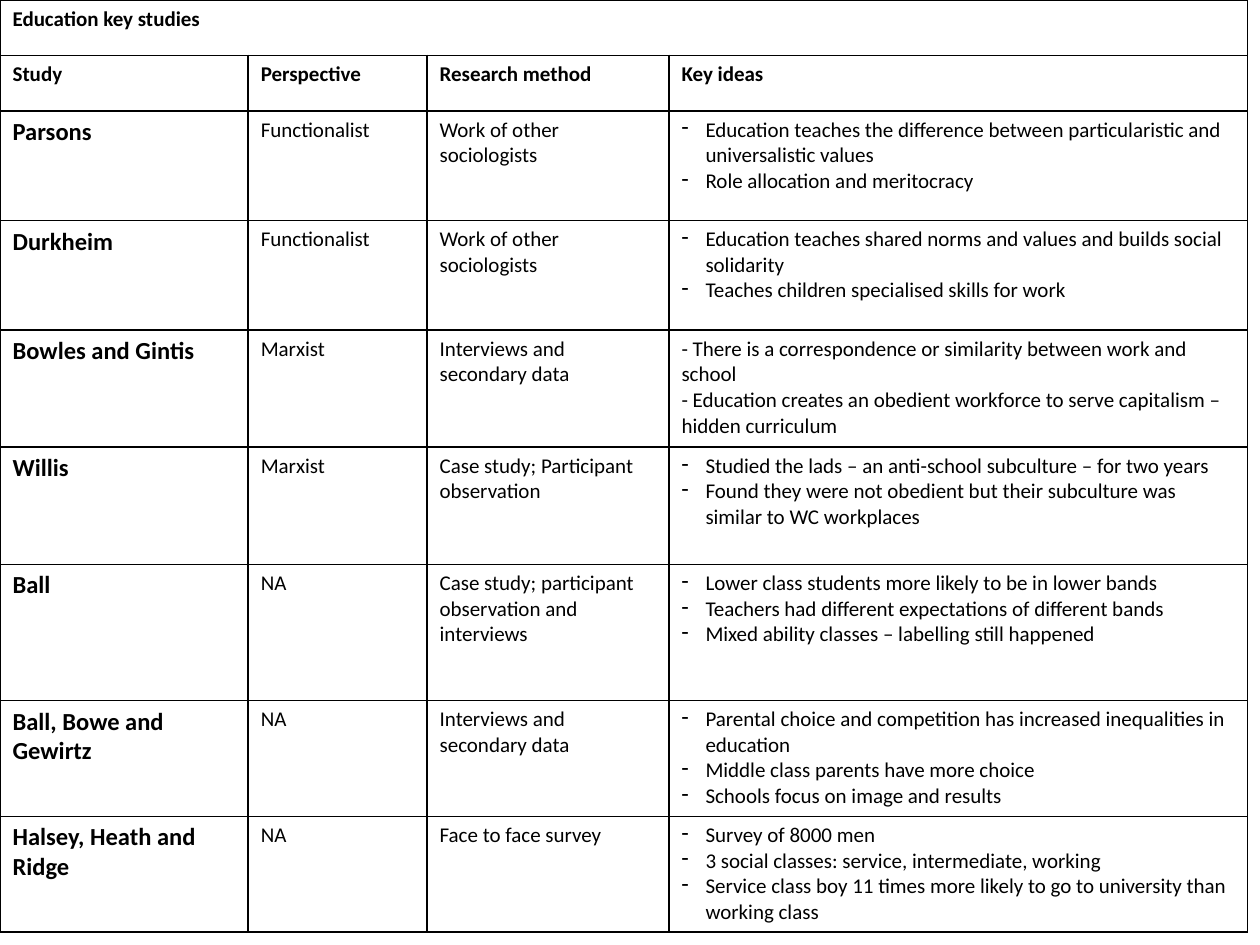
from lxml import etree
from pptx import Presentation
from pptx.dml.color import RGBColor
from pptx.oxml.ns import qn
from pptx.util import Inches, Pt

BLANK_LAYOUT = 6
COLORS = {"text": "000000", "border": "000000", "cell": "FFFFFF"}
HEADING = {"name": "Calibri", "size": Pt(12), "bold": True}
STUDY = {"name": "Calibri", "size": Pt(14), "bold": True}
BODY = {"name": "Calibri", "size": Pt(12), "bold": False}

COLUMN_WIDTHS = [1.97, 1.42, 1.92, 4.59]
ROW_HEIGHTS = [0.44, 0.44, 0.87, 0.87, 0.93, 0.93, 1.08, 0.92, 0.92]
BULLET_INDENT = 0.19

TITLE = "Education key studies"
HEADERS = ["Study", "Perspective", "Research method", "Key ideas"]
# Study, perspective, research method, key ideas
STUDIES = [
    ("Parsons", "Functionalist", "Work of other sociologists", [
        "Education teaches the difference between particularistic and universalistic values",
        "Role allocation and meritocracy"]),
    ("Durkheim", "Functionalist", "Work of other sociologists", [
        "Education teaches shared norms and values and builds social solidarity",
        "Teaches children specialised skills for work"]),
    ("Bowles and Gintis", "Marxist", "Interviews and secondary data", [
        "- There is a correspondence or similarity between work and school",
        "- Education creates an obedient workforce to serve capitalism – hidden curriculum"]),
    ("Willis", "Marxist", "Case study; Participant observation", [
        "Studied the lads – an anti-school subculture – for two years",
        "Found they were not obedient but their subculture was similar to WC workplaces"]),
    ("Ball", "NA", "Case study; participant observation and interviews", [
        "Lower class students more likely to be in lower bands",
        "Teachers had different expectations of different bands",
        "Mixed ability classes – labelling still happened"]),
    ("Ball, Bowe and Gewirtz", "NA", "Interviews and secondary data", [
        "Parental choice and competition has increased inequalities in education",
        "Middle class parents have more choice",
        "Schools focus on image and results"]),
    ("Halsey, Heath and Ridge", "NA", "Face to face survey", [
        "Survey of 8000 men",
        "3 social classes: service, intermediate, working",
        "Service class boy 11 times more likely to go to university than working class"]),
]


def style_cell(cell):
    """Give a cell a thin border on each side and a plain fill."""
    properties = cell._tc.get_or_add_tcPr()
    for side in ("a:lnL", "a:lnR", "a:lnT", "a:lnB"):
        line = etree.SubElement(properties, qn(side), w=str(Pt(1)))
        fill = etree.SubElement(line, qn("a:solidFill"))
        etree.SubElement(fill, qn("a:srgbClr"), val=COLORS["border"])
    cell.fill.solid()
    cell.fill.fore_color.rgb = RGBColor.from_string(COLORS["cell"])


def add_dash(paragraph):
    """Turn a paragraph into a dash bullet with a hanging indent."""
    properties = paragraph._p.get_or_add_pPr()
    properties.set("marL", str(Inches(BULLET_INDENT)))
    properties.set("indent", str(-Inches(BULLET_INDENT)))
    etree.SubElement(properties, qn("a:buFontTx"))
    etree.SubElement(properties, qn("a:buChar"), char="-")


def write_cell(cell, lines, font_format, dashed=False):
    frame = cell.text_frame
    for index, line in enumerate(lines):
        paragraph = frame.add_paragraph() if index else frame.paragraphs[0]
        if dashed:
            add_dash(paragraph)
        run = paragraph.add_run()
        run.text = line
        for name, value in font_format.items():
            setattr(run.font, name, value)
        run.font.color.rgb = RGBColor.from_string(COLORS["text"])


def add_grid(slide):
    """Add the empty table with its sizes, borders and fills."""
    table = slide.shapes.add_table(
        len(ROW_HEIGHTS), len(COLUMN_WIDTHS), Inches(0), Inches(0),
        Inches(sum(COLUMN_WIDTHS)), Inches(sum(ROW_HEIGHTS))).table
    table.first_row = table.horz_banding = False
    for column, width in zip(table.columns, COLUMN_WIDTHS):
        column.width = Inches(width)
    for row, height in zip(table.rows, ROW_HEIGHTS):
        row.height = Inches(height)
    for cell in table.iter_cells():
        style_cell(cell)
    return table


def main():
    deck = Presentation()
    deck.slide_width, deck.slide_height = Inches(10), Inches(7.5)
    slide = deck.slides.add_slide(deck.slide_layouts[BLANK_LAYOUT])
    studies_table = add_grid(slide)

    # Title across the full width
    title = studies_table.cell(0, 0)
    title.merge(studies_table.cell(0, len(HEADERS) - 1))
    write_cell(title, [TITLE], HEADING)

    # Column headings
    for column, header in enumerate(HEADERS):
        write_cell(studies_table.cell(1, column), [header], HEADING)

    # One row per study; ideas with typed dashes get no bullet
    for row, (study, perspective, method, ideas) in enumerate(STUDIES, start=2):
        write_cell(studies_table.cell(row, 0), [study], STUDY)
        write_cell(studies_table.cell(row, 1), [perspective], BODY)
        write_cell(studies_table.cell(row, 2), [method], BODY)
        write_cell(studies_table.cell(row, 3), ideas, BODY,
                   dashed=not ideas[0].startswith("-"))

    deck.save("out.pptx")


if __name__ == "__main__":
    main()
